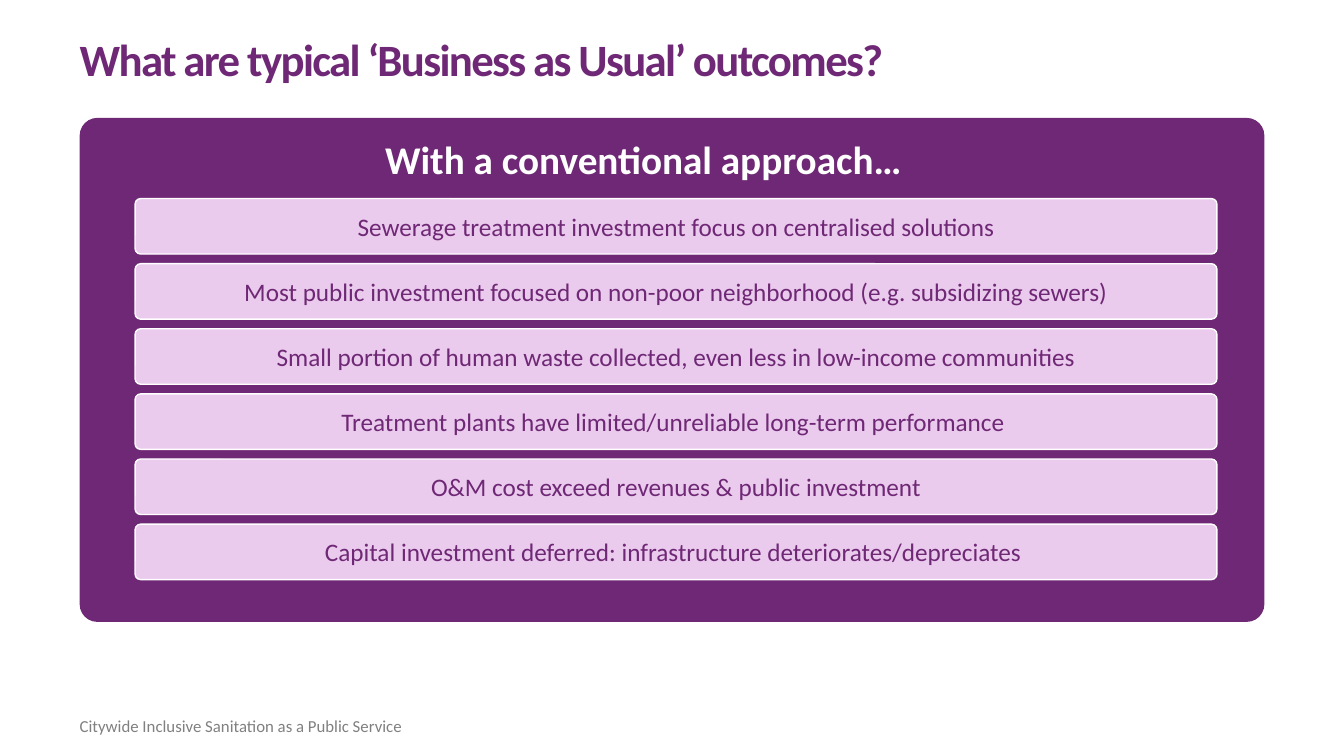
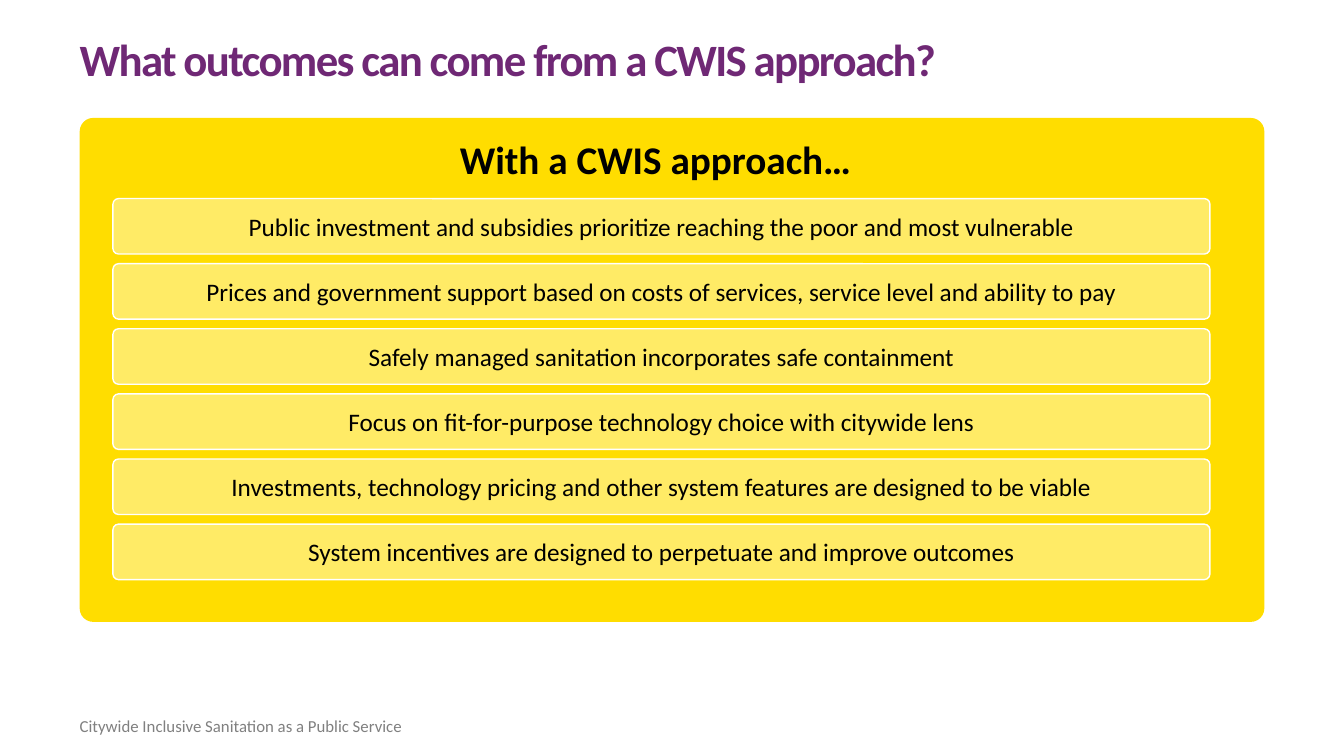
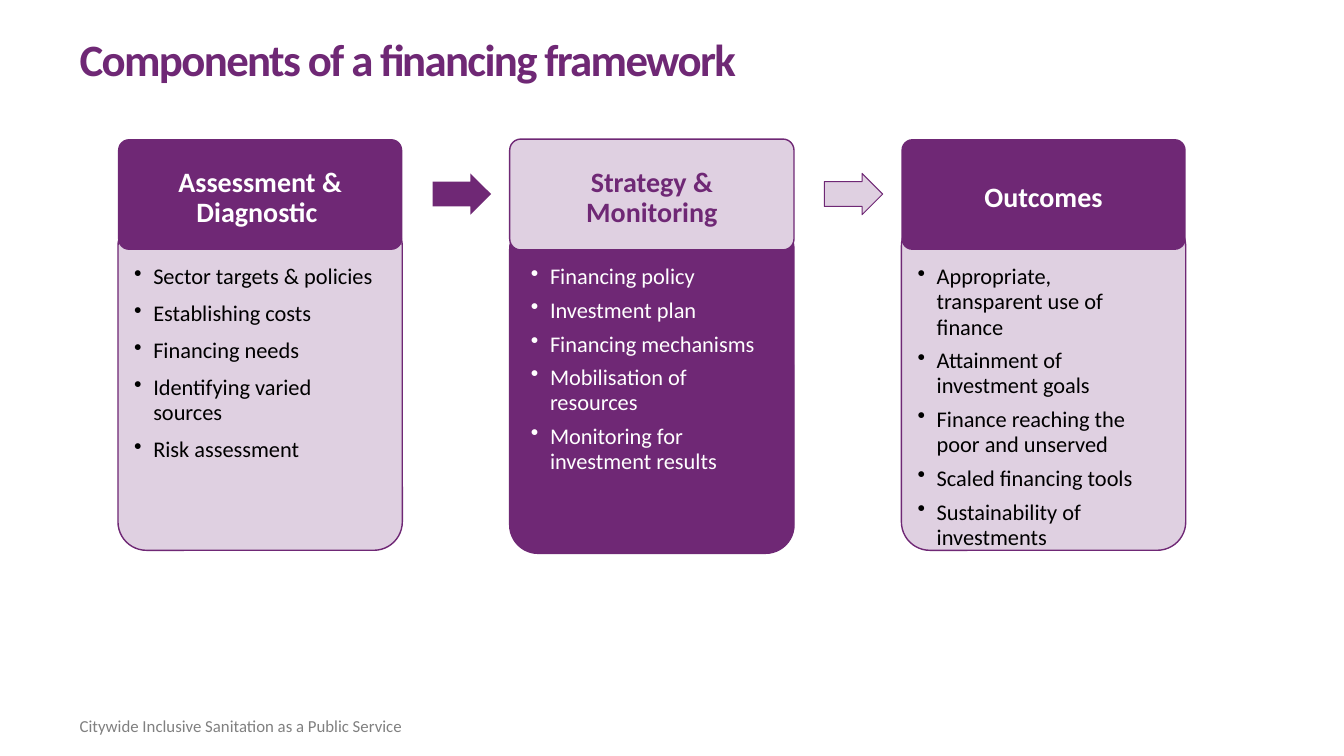
"""Build three slides on the outcomes and financing of citywide sanitation."""
from lxml import etree
from pptx import Presentation
from pptx import util as u
from pptx.dml.color import RGBColor
from pptx.enum import shapes, text
from pptx.oxml.ns import qn

COLOURS = {
    "purple": "6F2875",
    "pink": "EACAED",
    "lilac": "DFD0E1",
    "yellow": "FFDD00",
    "pale yellow": "FFEB66",
    "grey": "808080",
    "white": "FFFFFF",
    "black": "000000",
}
FONT = "Calibri"
FOOTER = "Citywide Inclusive Sanitation as a Public Service"
MARGIN = 0.79
ROUNDED = shapes.MSO_SHAPE.ROUNDED_RECTANGLE
ARROW = shapes.MSO_SHAPE.RIGHT_ARROW
CENTER = text.PP_ALIGN.CENTER
LEFT = text.PP_ALIGN.LEFT
MIDDLE = text.MSO_ANCHOR.MIDDLE
TOP = text.MSO_ANCHOR.TOP


class Deck:
    def __init__(self):
        self.presentation = Presentation()
        self.presentation.slide_width = u.Inches(13.33)
        self.presentation.slide_height = u.Inches(7.5)
        self.slide = None

    def colour(self, name):
        return RGBColor.from_string(COLOURS[name])

    def new_slide(self, title):
        self.slide = self.presentation.slides.add_slide(self.presentation.slide_layouts[6])
        self.text_box(FOOTER, (MARGIN, 7.1, 7.42, 0.38), 12, "grey")
        box = self.text_box(title, (MARGIN, 0.4, 10.46, 0.57), 32, "purple", bold=True, spacing=0.85)
        for run in box.text_frame.paragraphs[0].runs:
            run._r.get_or_add_rPr().set("spc", "-120")

    def label(self, shape, lines, size, colour, bold=False, align=LEFT, anchor=TOP,
              insets=(0, 0, 0, 0), spacing=None):
        frame = shape.text_frame
        frame.text = lines
        frame.word_wrap = True
        frame.vertical_anchor = anchor
        frame.margin_left, frame.margin_top, frame.margin_right, frame.margin_bottom = map(u.Inches, insets)
        for paragraph in frame.paragraphs:
            paragraph.alignment = align
            paragraph.line_spacing = spacing
            for run in paragraph.runs:
                run.font.name = FONT
                run.font.size = u.Pt(size)
                run.font.bold = bold
                run.font.color.rgb = self.colour(colour)

    def text_box(self, lines, place, size, colour, **style):
        box = self.slide.shapes.add_textbox(*map(u.Inches, place))
        self.label(box, lines, size, colour, **style)
        return box

    def shape(self, kind, place, fill, line=None, width=1, adjustments=(0.1,)):
        shape = self.slide.shapes.add_shape(kind, *map(u.Inches, place))
        shape.shadow.inherit = False
        for index, value in enumerate(adjustments):
            shape.adjustments[index] = value
        shape.fill.solid()
        shape.fill.fore_color.rgb = self.colour(fill)
        if line:
            shape.line.color.rgb = self.colour(line)
            shape.line.width = u.Pt(width)
        else:
            shape.line.fill.background()
        return shape

    def bullets(self, items, place, colour, space_before):
        box = self.text_box("\n".join(items), place, 16, colour, spacing=u.Pt(18))
        for index, paragraph in enumerate(box.text_frame.paragraphs):
            paragraph.space_before = u.Pt(space_before if index else 0)
            paragraph.space_after = u.Pt(6)
            properties = paragraph._p.get_or_add_pPr()
            properties.set("marL", str(u.Inches(0.19)))
            properties.set("indent", str(u.Inches(-0.19)))
            bullet_colour = etree.SubElement(properties, qn("a:buClr"))
            etree.SubElement(bullet_colour, qn("a:srgbClr"), val=COLOURS[colour])
            etree.SubElement(properties, qn("a:buChar"), char="•")

    def outcome_panel(self, heading, heading_span, outcomes, bar_span, panel, bar, bar_text, heading_text, radius):
        self.shape(ROUNDED, (MARGIN, 1.17, 11.75, 5), panel, adjustments=(radius,))
        left, width = heading_span
        self.text_box(heading, (left, 1.33, width, 0.55), 28, heading_text, bold=True, align=CENTER,
                      anchor=MIDDLE, insets=(0.13,) * 4, spacing=0.9)
        first, last = 1.97, 5.2
        step = (last - first) / (len(outcomes) - 1)
        left, width = bar_span
        for index, outcome in enumerate(outcomes):
            shape = self.shape(ROUNDED, (left, first + index * step, width, 0.55), bar, "white")
            self.label(shape, outcome, 18, bar_text, align=CENTER, anchor=MIDDLE, insets=(0.1,) * 4)

    def component(self, left, heading, items, dark_body, body_top, indent, space_before):
        body, body_text, header, header_text, header_line = (
            ("purple", "white", "lilac", "purple", "purple") if dark_body
            else ("lilac", "black", "purple", "white", None))
        self.shape(ROUNDED, (left, body_top, 2.82, 3.3), body, "purple")
        shape = self.shape(ROUNDED, (left, 1.38, 2.82, 1.1), header, header_line)
        self.label(shape, heading, 20, header_text, bold=True, align=CENTER, anchor=MIDDLE,
                   insets=(0.16, 0.16, 0.16, 0.08), spacing=0.9)
        self.bullets(items, (left + indent, 2.62, 2.41, 2.84), body_text, space_before)

    def arrow(self, left, fill, line=None):
        self.shape(ARROW, (left, 1.72, 0.58, 0.41), fill, line, 0.75, (0.6, 0.5))


def main():
    deck = Deck()

    deck.new_slide("What are typical ‘Business as Usual’ outcomes?")
    deck.outcome_panel("With a conventional approach…", (3.51, 5.74), [
        "Sewerage treatment investment focus on centralised solutions",
        "Most public investment focused on non-poor neighborhood (e.g. subsidizing sewers)",
        "Small portion of human waste collected, even less in low-income communities",
        "Treatment plants have limited/unreliable long-term performance ",
        "O&M cost exceed revenues & public investment",
        "Capital investment deferred: infrastructure deteriorates/depreciates ",
    ], (1.34, 10.73), "purple", "pink", "purple", "white", 0.035)

    deck.new_slide("What outcomes can come from a CWIS approach?")
    deck.outcome_panel("With a CWIS approach…", (MARGIN, 11.42), [
        "Public investment and subsidies prioritize reaching the poor and most vulnerable",
        "Prices and government support based on costs of services, service level and ability to pay",
        "Safely managed sanitation incorporates safe containment",
        "Focus on fit-for-purpose technology choice with citywide lens",
        "Investments, technology pricing and other system features are designed to be viable",
        "System incentives are designed to perpetuate and improve outcomes",
    ], (1.12, 10.88), "yellow", "pale yellow", "black", "black", 0.027)

    deck.new_slide("Components of a financing framework")
    components = [
        ("Assessment & Diagnostic ", [
            "Sector targets & policies", "Establishing costs", "Financing needs",
            "Identifying varied sources", "Risk assessment"], False, 2.16, 0.16, 2.4),
        ("Strategy & Monitoring", [
            "Financing policy", "Investment plan", "Financing mechanisms",
            "Mobilisation of resources", "Monitoring for investment results"], True, 2.19, 0.21, 0),
        ("Outcomes", [
            "Appropriate, transparent use of finance", "Attainment of investment goals",
            "Finance reaching the poor and unserved", "Scaled financing tools",
            "Sustainability of investments"], False, 2.16, 0.16, 0),
    ]
    first, last = 1.17, 8.94
    step = (last - first) / (len(components) - 1)
    for index, component in enumerate(components):
        deck.component(first + index * step, *component)
    for index, colours in enumerate([("purple",), ("lilac", "purple")]):
        deck.arrow(first + index * step + 3.12, *colours)

    deck.presentation.save("out.pptx")


if __name__ == "__main__":
    main()
